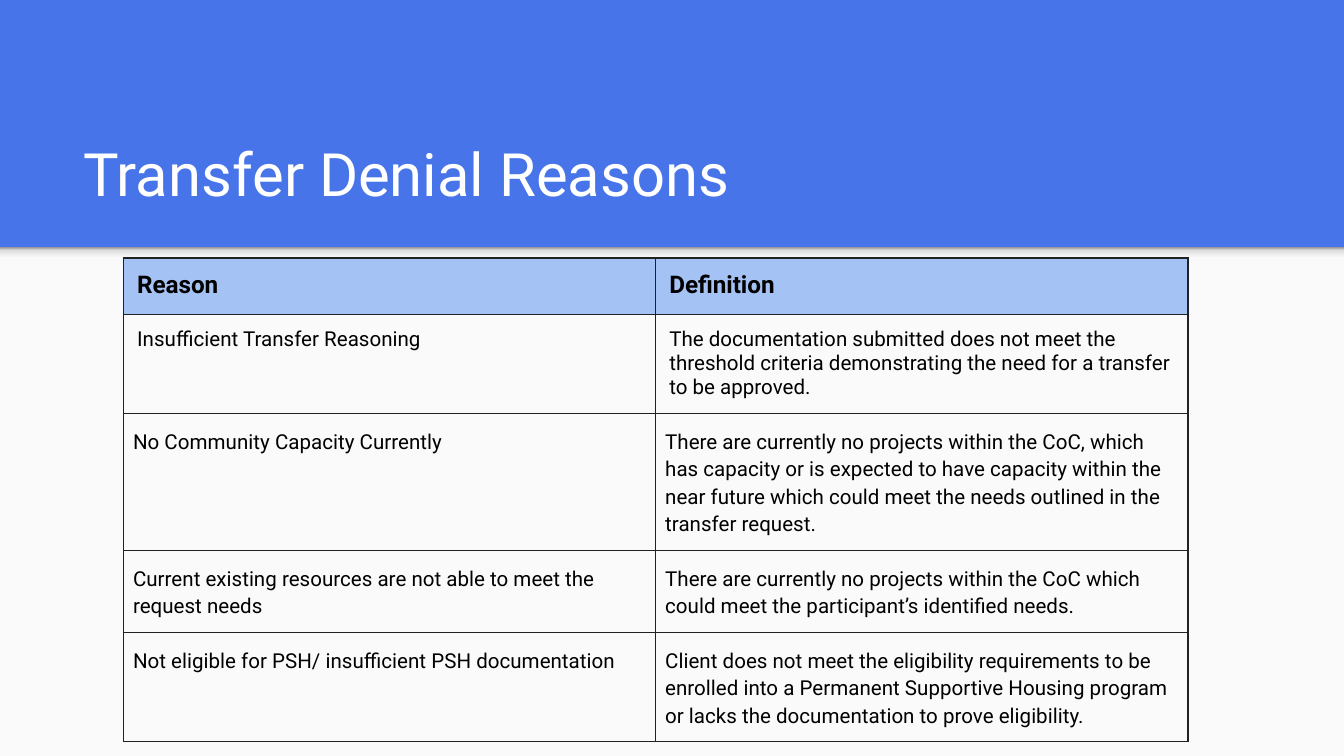
from dataclasses import dataclass

from lxml import etree
from pptx import Presentation
from pptx import util as u
from pptx.dml.color import RGBColor
from pptx.enum import shapes, text
from pptx.oxml.ns import qn


@dataclass(frozen=True)
class Theme:
    """Colours, font and type sizes of the slide."""

    font: str = "Roboto"
    banner: str = "4874E9"
    panel: str = "FAFAFA"
    header: str = "A4C2F4"
    border: str = "212121"
    title_ink: str = "FFFFFF"
    ink: str = "000000"
    title_size: int = 32
    header_size: int = 13
    body_size: int = 11
    fade: tuple = ((0, "F9F9F9"), (36, "F9F9F9"), (80, "DEDEDE"), (100, "999999"))


THEME = Theme()
SLIDE_WIDTH = 10
SLIDE_HEIGHT = SLIDE_WIDTH * 9 / 16
BANNER_HEIGHT = 1.84
HEADINGS = ("Reason", "Definition")
REASONS = (
    ("Insufficient Transfer Reasoning",
     "The documentation submitted does not meet the threshold criteria "
     "demonstrating the need for a transfer to be approved."),
    ("No Community Capacity Currently",
     "There are currently no projects within the CoC, which has capacity or is "
     "expected to have capacity within the near future which could meet the "
     "needs outlined in the transfer request."),
    ("Current existing resources are not able to meet the request needs",
     "There are currently no projects within the CoC which could meet the "
     "participant’s identified needs."),
    ("Not eligible for PSH/ insufficient PSH documentation",
     "Client does not meet the eligibility requirements to be enrolled into a "
     "Permanent Supportive Housing program or lacks the documentation to prove "
     "eligibility."),
)


def style_runs(paragraph, size, color, bold=False):
    """Apply the theme font to every run of a paragraph."""
    for run in paragraph.runs:
        run.font.name = THEME.font
        run.font.size = u.Pt(size)
        run.font.bold = bold
        run.font.color.rgb = RGBColor.from_string(color)


def add_band(slide, height):
    """Add a borderless full-width band just below the banner."""
    band = slide.shapes.add_shape(
        shapes.MSO_SHAPE.RECTANGLE, 0, u.Inches(BANNER_HEIGHT),
        u.Inches(SLIDE_WIDTH), u.Inches(height))
    band.shadow.inherit = False
    band.line.fill.background()
    band.fill.solid()
    band.fill.fore_color.rgb = RGBColor.from_string(THEME.panel)
    return band


def fade_upwards(band):
    """Fill a band with the theme's fade, darkest along its top edge."""
    band.fill.gradient()
    band.fill.gradient_angle = 90
    stops = band.fill._fill._gradFill.find(qn("a:gsLst"))
    for stop in list(stops):
        stops.remove(stop)
    for percent, color in THEME.fade:
        stop = etree.SubElement(stops, qn("a:gs"), pos=str(percent * 1000))
        etree.SubElement(stop, qn("a:srgbClr"), val=color)


def set_title(slide, wording):
    """Place and format the title placeholder."""
    title = slide.shapes.title
    title.left, title.top = u.Inches(0.52), u.Inches(0.81)
    title.width, title.height = u.Inches(8.99), u.Inches(0.84)
    frame = title.text_frame
    frame.text = wording
    frame.word_wrap = True
    frame.auto_size = text.MSO_AUTO_SIZE.NONE
    frame.vertical_anchor = text.MSO_ANCHOR.BOTTOM
    frame.margin_left = frame.margin_right = u.Inches(0.1)
    frame.margin_top = frame.margin_bottom = u.Inches(0.1)
    heading = frame.paragraphs[0]
    heading.alignment = text.PP_ALIGN.LEFT
    style_runs(heading, THEME.title_size, THEME.title_ink)


def border_cell(cell):
    """Draw a thin line on all four sides of a cell."""
    properties = cell._tc.get_or_add_tcPr()
    for side in ("lnL", "lnR", "lnT", "lnB"):
        line = etree.SubElement(properties, qn(f"a:{side}"), w=str(u.Pt(0.75)))
        fill = etree.SubElement(line, qn("a:solidFill"))
        etree.SubElement(fill, qn("a:srgbClr"), val=THEME.border)


def fill_cell(cell, wording, is_header, is_spaced):
    """Write and format one table cell."""
    cell.text = wording
    cell.margin_left = cell.margin_right = u.Inches(0.07 if is_spaced else 0.1)
    cell.margin_top = cell.margin_bottom = u.Inches(0.1)
    border_cell(cell)
    if is_header:
        cell.fill.solid()
        cell.fill.fore_color.rgb = RGBColor.from_string(THEME.header)
    else:
        cell.fill.background()
    paragraph = cell.text_frame.paragraphs[0]
    if is_spaced:
        paragraph.line_spacing = 1.15
        paragraph.space_before = paragraph.space_after = u.Pt(12)
    size = THEME.header_size if is_header else THEME.body_size
    style_runs(paragraph, size, THEME.ink, is_header)


def add_reasons(slide):
    """Add the table of denial reasons and their definitions."""
    entries = (HEADINGS, *REASONS)
    column_width, row_height = 3.96, 0.42
    reasons = slide.shapes.add_table(
        len(entries), len(HEADINGS), u.Inches(0.92), u.Inches(1.92),
        u.Inches(column_width * len(HEADINGS)),
        u.Inches(row_height * len(entries))).table
    reasons.first_row = reasons.horz_banding = False
    for row_index, entry in enumerate(entries):
        for column_index, wording in enumerate(entry):
            fill_cell(reasons.cell(row_index, column_index), wording,
                      is_header=row_index == 0, is_spaced=row_index > 1)


def main():
    """Build and save the slide."""
    deck = Presentation()
    deck.slide_width, deck.slide_height = u.Inches(SLIDE_WIDTH), u.Inches(SLIDE_HEIGHT)
    slide = deck.slides.add_slide(deck.slide_layouts[5])
    slide.background.fill.solid()
    slide.background.fill.fore_color.rgb = RGBColor.from_string(THEME.banner)
    add_band(slide, SLIDE_HEIGHT - BANNER_HEIGHT)
    fade_upwards(add_band(slide, 0.12))
    set_title(slide, "Transfer Denial Reasons")
    add_reasons(slide)
    deck.save("out.pptx")


if __name__ == "__main__":
    main()
